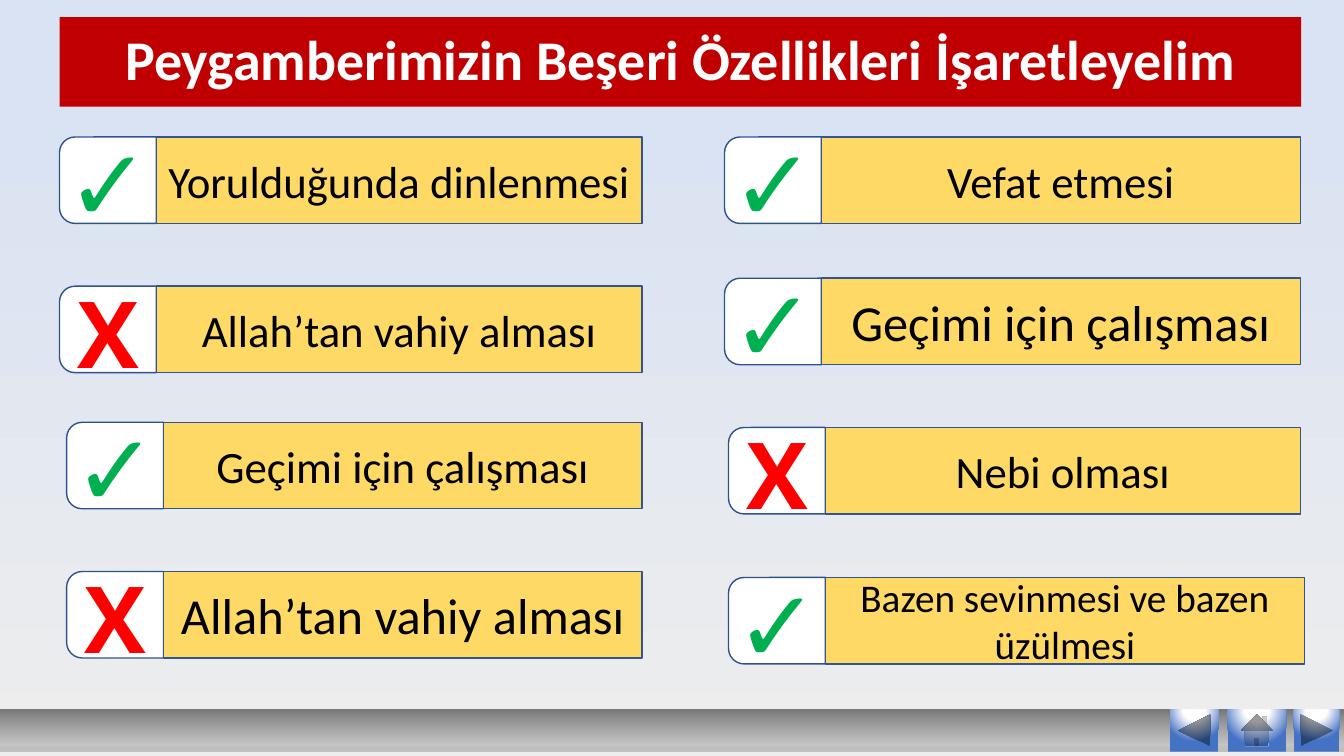
from dataclasses import dataclass

from lxml import etree
from pptx import Presentation
from pptx import util as u
from pptx.dml.color import RGBColor
from pptx.enum import shapes, text
from pptx.oxml.ns import qn

TITLE = "Peygamberimizin Beşeri Özellikleri İşaretleyelim"
CHECK, CROSS = "✓", "X"

# (left, right, top, mark, wording, type size)
ANSWERS = [
    (1.5, 16.18, 3.45, CHECK, "Yorulduğunda dinlenmesi", 32),
    (1.5, 16.18, 7.21, CROSS, "Allah’tan vahiy alması", 32),
    (1.68, 16.18, 10.64, CHECK, "Geçimi için çalışması", 32),
    (1.68, 16.18, 14.4, CROSS, "Allah’tan vahiy alması", 36),
    (18.26, 32.77, 3.45, CHECK, "Vefat etmesi", 32),
    (18.26, 32.77, 7.01, CHECK, "Geçimi için çalışması", 36),
    (18.36, 32.77, 10.77, CROSS, "Nebi olması", 32),
    (18.36, 32.87, 14.55, CHECK, "Bazen sevinmesi ve bazen üzülmesi", 28),
]
BUTTONS = [
    (29.49, 1.22, shapes.MSO_SHAPE.ACTION_BUTTON_BACK_OR_PREVIOUS),
    (32.61, 1.14, shapes.MSO_SHAPE.ACTION_BUTTON_FORWARD_OR_NEXT),
    (30.94, 1.47, shapes.MSO_SHAPE.ACTION_BUTTON_HOME),
]
TAB_WIDTH, ROW_HEIGHT = 2.44, 2.18
FOOTER_TOP, FOOTER_HEIGHT = 17.88, 1.06


@dataclass(frozen=True)
class Theme:
    """Colours, fonts and type sizes of the slide."""
    font: str = "Calibri"
    title_size: int = 40
    title_fill: str = "C00000"
    white: str = "FFFFFF"
    black: str = "000000"
    answer_fill: str = "FFD966"
    answer_line: str = "325491"
    tab_line: str = "2F528F"
    background: tuple = ((0, "EDEDED", 100), (84, "DAE3F3", 100))
    footer: tuple = ((0, "C0C0C0", 100), (17, "B3B3B3", 70), (100, "777777", 100))
    button: tuple = ((0, "FFFFFF", 100), (35, "FFFFFF", 100), (100, "4472C4", 100))


@dataclass(frozen=True)
class Mark:
    """Type and box of a mark, placed relative to its tab."""
    font: str
    size: int
    color: str
    box: tuple


THEME = Theme()
MARKS = {
    CHECK: Mark("TeX Gyre Bonum", 72, "00B050", (-0.58, -0.53, 3.63, 3.33)),
    CROSS: Mark("Open Sans", 66, "FF0000", (0.18, -0.38, 2.08, 3.07)),
}


def rgb(color):
    return RGBColor.from_string(color)


def cm(*lengths):
    return [u.Cm(length) for length in lengths]


def set_gradient(fill, element, stops, radial=False):
    fill.gradient()
    gradient = next(element.iter(qn("a:gradFill")))
    gradient.clear()
    stop_list = etree.SubElement(gradient, qn("a:gsLst"))
    for position, color, opacity in stops:
        stop = etree.SubElement(stop_list, qn("a:gs"), pos=str(position * 1000))
        value = etree.SubElement(stop, qn("a:srgbClr"), val=color)
        if opacity < 100:
            etree.SubElement(value, qn("a:alpha"), val=str(opacity * 1000))
    if radial:
        circle = etree.SubElement(gradient, qn("a:path"), path="circle")
        etree.SubElement(circle, qn("a:fillToRect"), l="50000", t="-80000", r="50000", b="180000")
    else:
        etree.SubElement(gradient, qn("a:lin"), ang="16200000", scaled="0")


def set_text(shape, wording, font, size, color, bold=False):
    frame = shape.text_frame
    frame.text = wording
    frame.vertical_anchor = text.MSO_ANCHOR.MIDDLE
    paragraph = frame.paragraphs[0]
    paragraph.alignment = text.PP_ALIGN.CENTER
    for run in paragraph.runs:
        run.font.name, run.font.size, run.font.bold = font, u.Pt(size), bold
        run.font.color.rgb = rgb(color)
    return paragraph


def add_shape(parent, kind, left, top, width, height, fill=None, line=None):
    shape = parent.add_shape(kind, *cm(left, top, width, height))
    shape.shadow.inherit = False
    if fill:
        shape.fill.solid()
        shape.fill.fore_color.rgb = rgb(fill)
    if line:
        shape.line.color.rgb = rgb(line)
        shape.line.width = u.Pt(1)
    else:
        shape.line.fill.background()
    return shape


def add_title(slide):
    title = slide.shapes.title
    title.left, title.top, title.width, title.height = cm(1.5, 0.43, 31.29, 2.26)
    title.fill.solid()
    title.fill.fore_color.rgb = rgb(THEME.title_fill)
    paragraph = set_text(title, TITLE, THEME.font, THEME.title_size, THEME.white, True)
    paragraph.line_spacing = 0.9


def add_answer(slide, left, right, top, symbol, wording, size):
    group = slide.shapes.add_group_shape().shapes
    shift = (TAB_WIDTH - ROW_HEIGHT) / 2
    tab = add_shape(group, shapes.MSO_SHAPE.ROUND_2_SAME_RECTANGLE, left + shift, top - shift,
                    ROW_HEIGHT, TAB_WIDTH, THEME.white, THEME.tab_line)
    tab.rotation = 270
    tab.adjustments[0] = 0.18
    label_left = left + TAB_WIDTH
    label = add_shape(group, shapes.MSO_SHAPE.RECTANGLE, label_left, top,
                      right - label_left, ROW_HEIGHT, THEME.answer_fill, THEME.answer_line)
    label.text_frame.word_wrap = True
    set_text(label, wording, THEME.font, size, THEME.black)

    mark = MARKS[symbol]
    x, y, width, height = mark.box
    box = slide.shapes.add_textbox(*cm(left + x, top + y, width, height))
    box.text_frame.word_wrap = symbol == CHECK
    set_text(box, symbol, mark.font, mark.size, mark.color, True)
    box.text_frame.vertical_anchor = text.MSO_ANCHOR.TOP


def add_footer(slide):
    bar = add_shape(slide.shapes, shapes.MSO_SHAPE.RECTANGLE, 0, FOOTER_TOP, 33.87, FOOTER_HEIGHT)
    set_gradient(bar.fill, bar.element, THEME.footer)
    for left, width, kind in BUTTONS:
        button = add_shape(slide.shapes, kind, left, FOOTER_TOP, width, FOOTER_HEIGHT)
        set_gradient(button.fill, button.element, THEME.button, radial=True)


def main():
    """Build the slide of marked answers and save it."""
    presentation = Presentation()
    presentation.slide_width, presentation.slide_height = cm(33.87, 19.05)
    slide = presentation.slides.add_slide(presentation.slide_layouts[5])
    set_gradient(slide.background.fill, slide.element, THEME.background)
    add_title(slide)
    for answer in ANSWERS:
        add_answer(slide, *answer)
    add_footer(slide)
    presentation.save("out.pptx")


if __name__ == "__main__":
    main()
